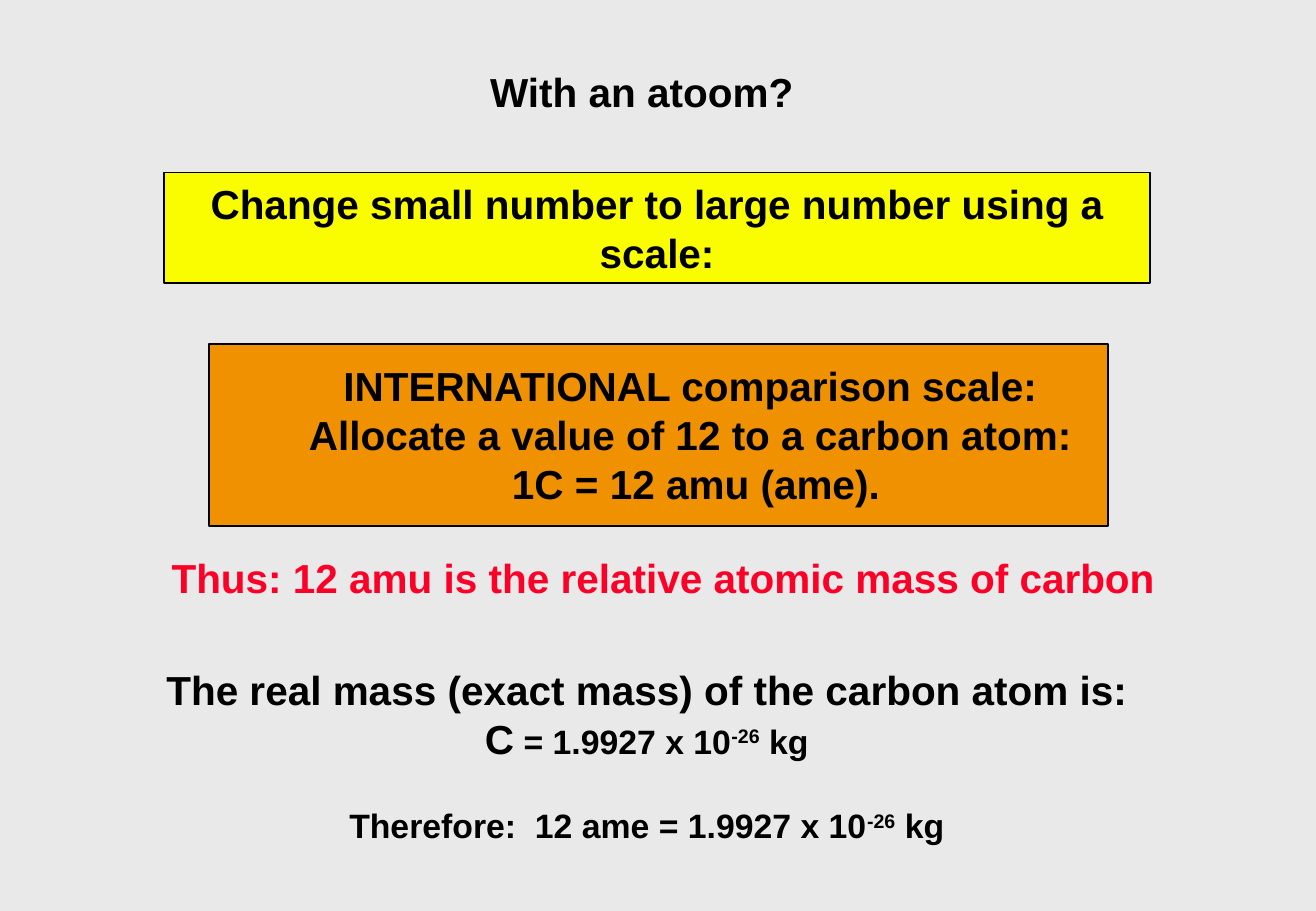
from dataclasses import dataclass
from typing import Optional

from pptx import Presentation
from pptx.dml.color import RGBColor
from pptx.enum.shapes import MSO_SHAPE
from pptx.enum.text import MSO_ANCHOR, MSO_AUTO_SIZE, PP_ALIGN
from pptx.util import Pt

BLACK, RED, YELLOW, ORANGE, GREY = "000000", "FC0128", "FAFD00", "EF9100", "E9E9E9"
LARGE, SMALL = 24, 20
LINE_RATIO = 1.21


@dataclass(frozen=True)
class Span:
    text: str
    size: float = LARGE
    raised: bool = False


@dataclass(frozen=True)
class Line:
    spans: tuple[Span, ...]
    space_before: float = 0


@dataclass(frozen=True)
class Block:
    left: float
    top: float
    width: float
    height: float
    lines: tuple[Line, ...] = ()
    color: str = BLACK
    fill: Optional[str] = None


def plain(*texts: str) -> tuple[Line, ...]:
    return tuple(Line((Span(text),)) for text in texts)


def power(lead: str) -> tuple[Span, ...]:
    """Spans of a mass in kg that ends in a power of ten."""
    return Span(lead, SMALL), Span("-26", SMALL, raised=True), Span(" kg", SMALL)


TITLE = Block(78, 36, 604.8, 36.7, plain("With an atoom?"))
BLOCKS = (
    Block(123.8, 203.8, 532.8, 108, fill=ORANGE),
    Block(84.2, 210.2, 656.6, 94.3, plain(
        "INTERNATIONAL comparison scale: ",
        "Allocate a value of 12 to a carbon atom: ",
        "1C = 12 amu (ame).",
    )),
    Block(84.2, 324, 617.8, 36.7,
          plain("Thus: 12 amu is the relative atomic mass of carbon"), RED),
    Block(84.2, 390.2, 598.3, 113.8, (
        Line((Span("The real mass (exact mass) of the carbon atom is: C"),
              *power(" = 1.9927 x 10"))),
        Line(power("Therefore:  12 ame = 1.9927 x 10"), space_before=25),
    )),
    Block(97.2, 102.2, 584.6, 65.5,
          plain("Change small number to large number using a scale:"), fill=YELLOW),
)


def rgb(value: str) -> RGBColor:
    return RGBColor.from_string(value)


def write(shape, block: Block) -> None:
    frame = shape.text_frame
    frame_format = {
        "word_wrap": True, "auto_size": MSO_AUTO_SIZE.NONE,
        "vertical_anchor": MSO_ANCHOR.TOP,
        "margin_left": Pt(7.2), "margin_right": Pt(7.2),
        "margin_top": Pt(3.6), "margin_bottom": Pt(3.6),
    }
    for name, value in frame_format.items():
        setattr(frame, name, value)
    for index, line in enumerate(block.lines):
        paragraph = frame.add_paragraph() if index else frame.paragraphs[0]
        paragraph_format = {
            "alignment": PP_ALIGN.CENTER,
            "line_spacing": Pt(LINE_RATIO * line.spans[0].size),
            "space_before": Pt(line.space_before), "space_after": Pt(0),
        }
        for name, value in paragraph_format.items():
            setattr(paragraph, name, value)
        for span in line.spans:
            run = paragraph.add_run()
            run.text = span.text
            for name, value in {"name": "Arial", "size": Pt(span.size), "bold": True}.items():
                setattr(run.font, name, value)
            run.font.color.rgb = rgb(block.color)
            if span.raised:
                run._r.get_or_add_rPr().set("baseline", "30000")


def draw(slide, block: Block) -> None:
    box = [Pt(value) for value in (block.left, block.top, block.width, block.height)]
    if block.fill:
        shape = slide.shapes.add_shape(MSO_SHAPE.RECTANGLE, *box)
        shape.shadow.inherit = False
        shape.fill.solid()
        shape.fill.fore_color.rgb = rgb(block.fill)
        shape.line.color.rgb = rgb(BLACK)
        shape.line.width = Pt(1)
    else:
        shape = slide.shapes.add_textbox(*box)
    write(shape, block)


def main() -> None:
    presentation = Presentation()
    presentation.slide_width, presentation.slide_height = Pt(780), Pt(540)
    slide = presentation.slides.add_slide(presentation.slide_layouts[5])
    slide.background.fill.solid()
    slide.background.fill.fore_color.rgb = rgb(GREY)
    title = slide.shapes.title
    for name in ("left", "top", "width", "height"):
        setattr(title, name, Pt(getattr(TITLE, name)))
    write(title, TITLE)
    for block in BLOCKS:
        draw(slide, block)
    presentation.save("out.pptx")


if __name__ == "__main__":
    main()
